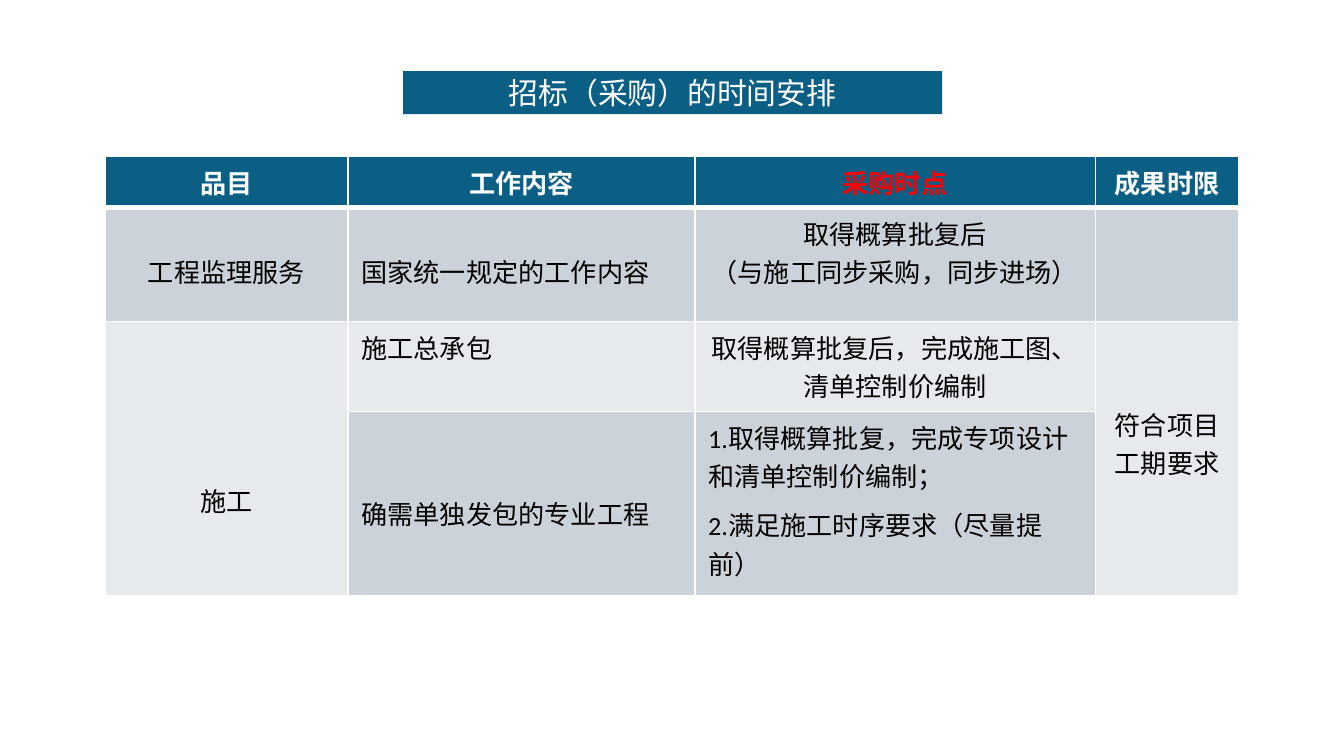
from pptx import Presentation
from pptx.dml.color import RGBColor
from pptx.enum import shapes, text
from pptx.oxml import parse_xml
from pptx.oxml.ns import nsdecls
from pptx.util import Inches, Pt

BLUE, DARK, LIGHT = "0B5F84", "CCD2D9", "E7EAED"
WHITE, BLACK, RED = "FFFFFF", "000000", "FF0000"
LATIN, HAN = "Calibri", "Noto Sans CJK SC"
MID, LEFT = text.PP_ALIGN.CENTER, text.PP_ALIGN.LEFT
PAD, LINE = 3.6, 20.4  # cell padding and height of a text line, in points

COLS = [1.81, 2.58, 2.98, 1.07]
ROWS = [0.38, 0.85, 0.66, 1.37]
HEADS = ["品目", "工作内容", "采购时点", "成果时限"]
# row, column, lines, fill, alignment, font, lines of space above, rows spanned
BODY = [
    (1, 0, ["工程监理服务"], DARK, MID, HAN, 1, 1),
    (1, 1, ["国家统一规定的工作内容"], DARK, LEFT, LATIN, 1, 1),
    (1, 2, ["取得概算批复后", "（与施工同步采购，同步进场）"], DARK, MID, LATIN, 0, 1),
    (1, 3, [], DARK, MID, LATIN, 0, 1),
    (2, 0, ["施工"], LIGHT, MID, HAN, 4, 2),
    (2, 1, ["施工总承包"], LIGHT, LEFT, LATIN, 0, 1),
    (2, 2, ["取得概算批复后，完成施工图、清单控制价编制"], LIGHT, MID, LATIN, 0, 1),
    (2, 3, ["符合项目", "工期要求"], LIGHT, MID, HAN, 2, 2),
    (3, 1, ["确需单独发包的专业工程"], DARK, LEFT, LATIN, 2, 1),
    (3, 2, ["1.取得概算批复，完成专项设计和清单控制价编制；",
            "2.满足施工时序要求（尽量提前）"], DARK, LEFT, LATIN, 0, 1),
]


def paint(fill, color):
    fill.solid()
    fill.fore_color.rgb = RGBColor.from_string(color)


def write(frame, lines, size, color, align, face, bold=False, gap=0):
    for i, line in enumerate(lines):
        para = frame.add_paragraph() if i else frame.paragraphs[0]
        para.text, para.alignment = line, align
        font = para.font
        font.size, font.name, font.bold = Pt(size), face, bold
        font.color.rgb = RGBColor.from_string(color)
        if i and gap:
            para.space_before = Pt(gap)


def edge(cell, low=1):
    # Borders come before the fill in the cell properties
    props = cell._tc.get_or_add_tcPr()
    for i, (side, width) in enumerate([("L", 1), ("R", 1), ("T", 1), ("B", low)]):
        props.insert(i, parse_xml(
            f'<a:ln{side} {nsdecls("a")} w="{Pt(width)}"><a:solidFill>'
            f'<a:srgbClr val="{WHITE}"/></a:solidFill></a:ln{side}>'))


def banner(slide, x, y, w, h):
    box = slide.shapes.add_shape(shapes.MSO_SHAPE.RECTANGLE,
                                 Inches(x), Inches(y), Inches(w), Inches(h))
    box.shadow.inherit = False
    paint(box.fill, BLUE)
    box.line.fill.background()
    frame = box.text_frame
    frame.word_wrap = True
    frame.vertical_anchor = text.MSO_ANCHOR.MIDDLE
    frame.margin_left = frame.margin_right = Inches(0.06)
    frame.margin_top = frame.margin_bottom = Inches(0.03)
    write(frame, ["招标（采购）的时间安排"], 16, WHITE, MID, HAN)


def schedule(slide, x, y):
    table = slide.shapes.add_table(
        len(ROWS), len(COLS), Inches(x), Inches(y),
        Inches(sum(COLS)), Inches(sum(ROWS))).table
    for col, w in zip(table.columns, COLS):
        col.width = Inches(w)
    for row, h in zip(table.rows, ROWS):
        row.height = Inches(h)

    # Header row
    for c, head in enumerate(HEADS):
        cell = table.cell(0, c)
        paint(cell.fill, BLUE)
        edge(cell, 3)
        write(cell.text_frame, [head], 14, RED if c == 2 else WHITE, MID, LATIN, True)

    # Body cells
    for r, c, lines, fill, align, face, skip, span in BODY:
        cell = table.cell(r, c)
        if span > 1:
            cell.merge(table.cell(r + span - 1, c))
        for k in range(r, r + span):
            paint(table.cell(k, c).fill, fill)
            edge(table.cell(k, c))
        cell.margin_top = Pt(PAD + skip * LINE)
        write(cell.text_frame, lines, 14, BLACK, align, face, gap=6 if r == 3 else 0)


def main():
    deck = Presentation()
    # Widescreen, 16 to 9
    deck.slide_width = Inches(10)
    deck.slide_height = deck.slide_width * 9 // 16
    slide = deck.slides.add_slide(deck.slide_layouts[6])
    banner(slide, 3, 0.53, 4.01, 0.32)
    schedule(slide, 0.78, 1.16)
    deck.save("out.pptx")


if __name__ == "__main__":
    main()
